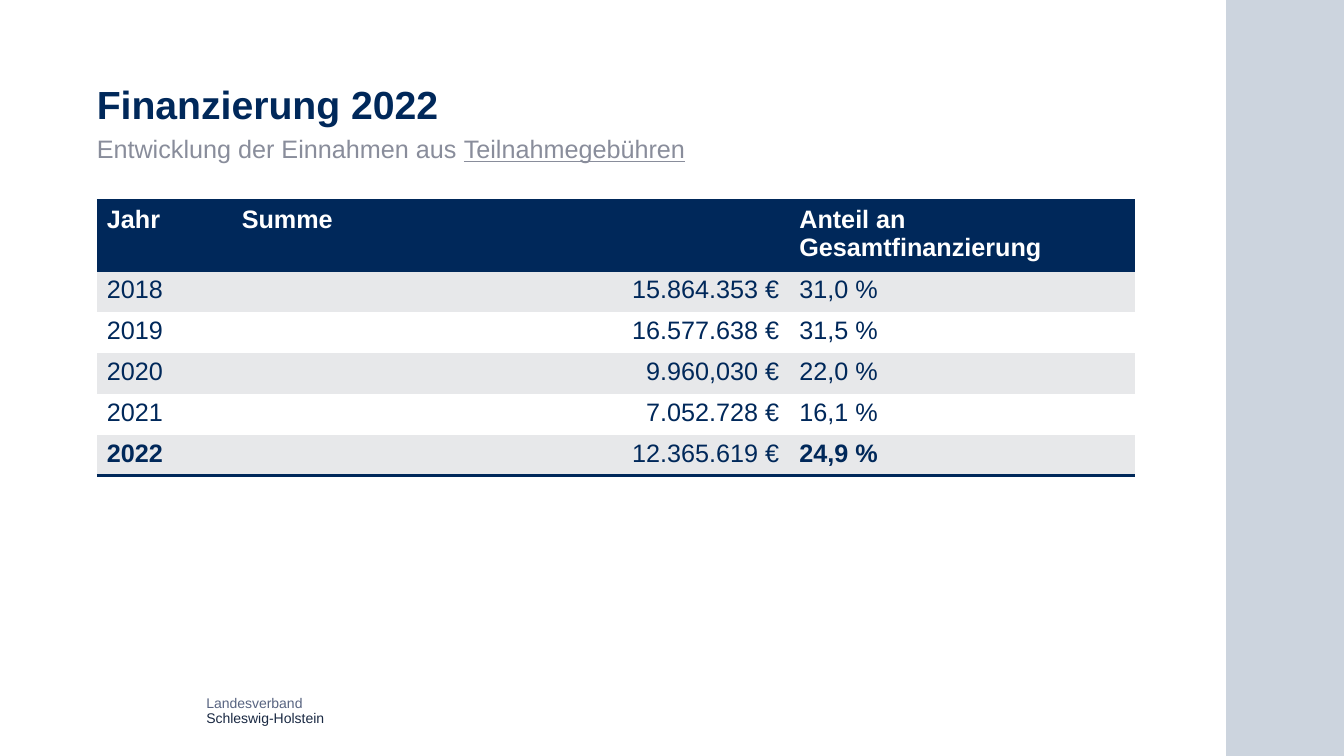
from dataclasses import dataclass

from lxml import etree
from pptx import Presentation
from pptx.dml.color import RGBColor
from pptx.enum.shapes import MSO_SHAPE as Shape
from pptx.enum.text import MSO_ANCHOR as Anchor, PP_ALIGN as Align
from pptx.oxml.ns import qn
from pptx.util import Cm, Pt


@dataclass(frozen=True)
class Theme:
    font: str = "Arial"
    navy: str = "00285A"
    grey: str = "898D9B"
    band: str = "E7E8EA"
    white: str = "FFFFFF"
    sender: str = "586481"
    region: str = "1A2943"
    title_size: int = 28
    text_size: int = 18
    sender_size: int = 10


theme = Theme()
NO_STYLE = "{2D5ABB26-0587-4C30-8999-92F81FD0307C}"


def style(font, size, color, bold=False):
    font.name, font.size, font.bold = theme.font, Pt(size), bold
    font.color.rgb = RGBColor.from_string(color)


def frame_text(shape, anchor):
    frame = shape.text_frame
    frame.word_wrap = True
    frame.vertical_anchor = anchor
    frame.margin_left = frame.margin_right = frame.margin_top = frame.margin_bottom = 0
    return frame


deck = Presentation()
deck.slide_width, deck.slide_height = Cm(33.87), Cm(19.05)
page = deck.slides.add_slide(deck.slide_layouts[5])
left, width = Cm(2.44), Cm(26.16)

# Side strip
strip = page.shapes.add_shape(Shape.RECTANGLE, Cm(30.9), 0, Cm(2.97), deck.slide_height)
strip.shadow.inherit = False
strip.line.fill.background()
strip.fill.solid()
strip.fill.fore_color.rgb = RGBColor.from_string(theme.navy)
strip_color = strip.fill._xPr.find(".//" + qn("a:srgbClr"))
etree.SubElement(strip_color, qn("a:alpha"), val="20000")

# Title
title = page.shapes.title
title.left, title.top, title.width, title.height = left, Cm(1.09), width, Cm(2.13)
frame = frame_text(title, Anchor.BOTTOM)
frame.text = "Finanzierung 2022"
para = frame.paragraphs[0]
para.alignment, para.line_spacing = Align.LEFT, 0.9
style(para.runs[0].font, theme.title_size, theme.navy, True)

# Subtitle
box = page.shapes.add_textbox(left, Cm(3.45), width, Cm(0.76))
para = frame_text(box, Anchor.TOP).paragraphs[0]
para.line_spacing = 0.9
for text, underline in (("Entwicklung der Einnahmen aus ", False), ("Teilnahmegebühren", True)):
    span = para.add_run()
    span.text = text
    style(span.font, theme.text_size, theme.grey)
    span.font.underline = underline

# Income table
rows = [
    ("Jahr", "Summe", "Anteil an Gesamtfinanzierung"),
    ("2018", "15.864.353 €", "31,0 %"),
    ("2019", "16.577.638 €", "31,5 %"),
    ("2020", "9.960,030 €", "22,0 %"),
    ("2021", "7.052.728 €", "16,1 %"),
    ("2022", "12.365.619 €", "24,9 %"),
]
last = len(rows) - 1
row_height = Cm(1.03)
table = page.shapes.add_table(len(rows), 3, left, Cm(5.05), width, row_height * len(rows)).table
table._tbl.tblPr.find(qn("a:tableStyleId")).text = NO_STYLE
for column, column_width in zip(table.columns, (3.4, 14.05, 8.71)):
    column.width = Cm(column_width)

for r, values in enumerate(rows):
    header = r == 0
    edges = ("a:lnT", "a:lnB") if header else ("a:lnB",) if r == last else ()
    for c, value in enumerate(values):
        cell = table.cell(r, c)
        for edge in edges:
            line = etree.SubElement(cell._tc.get_or_add_tcPr(), qn(edge), w=str(Pt(2)))
            fill = etree.SubElement(line, qn("a:solidFill"))
            etree.SubElement(fill, qn("a:srgbClr"), val=theme.navy)
        cell.fill.solid()
        color = theme.navy if header else theme.band if r % 2 else theme.white
        cell.fill.fore_color.rgb = RGBColor.from_string(color)
        cell.text_frame.text = value
        para = cell.text_frame.paragraphs[0]
        para.alignment = Align.RIGHT if c == 1 and not header else Align.LEFT
        bold = header or (r == last and c != 1)
        style(para.runs[0].font, theme.text_size, theme.white if header else theme.navy, bold)

    # The summary row is banded like the first data row
    if r == last:
        for cell in table.rows[r].cells:
            cell.fill.fore_color.rgb = RGBColor.from_string(theme.band)

# Sender
box = page.shapes.add_textbox(Cm(5.2), Cm(17.45), Cm(6.32), Cm(0.86))
frame = frame_text(box, Anchor.BOTTOM)
frame.text = "Landesverband\nSchleswig-Holstein"
for para, color in zip(frame.paragraphs, (theme.sender, theme.region)):
    para.line_spacing = Pt(11)
    style(para.runs[0].font, theme.sender_size, color)

deck.save("out.pptx")
